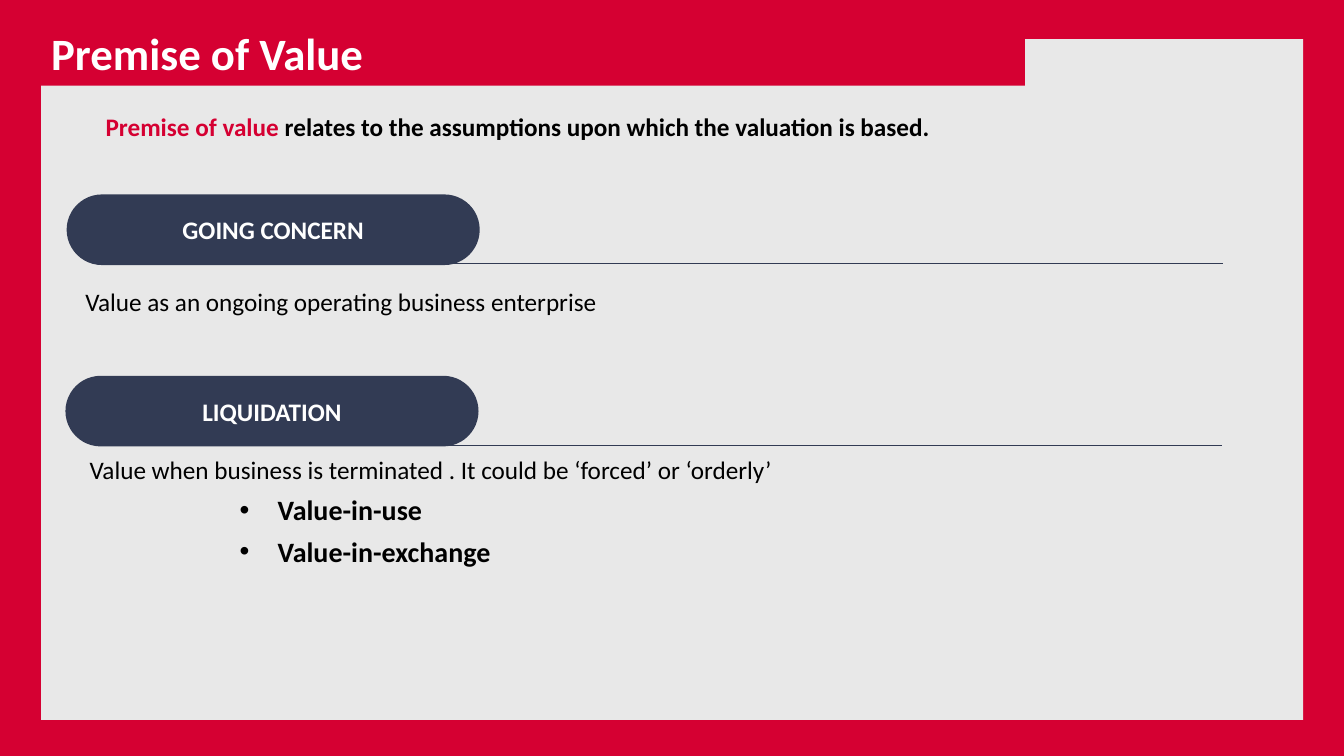
from pptx import Presentation
from pptx.dml.color import RGBColor as RGB
from pptx.enum.shapes import MSO_CONNECTOR as LINK, MSO_SHAPE as KIND
from pptx.enum.text import MSO_ANCHOR as ANCHOR, PP_ALIGN as ALIGN
from pptx.oxml.ns import qn
from pptx.util import Cm, Pt
from lxml.etree import SubElement as Sub

HUES = {"red": "D50032", "gray": "E8E8E8", "navy": "323B54", "white": "FFFFFF", "black": "000000"}

deck = Presentation()
deck.slide_width, deck.slide_height = Cm(33.87), Cm(19.05)
slide = deck.slides.add_slide(deck.slide_layouts[6])
shapes = slide.shapes


def block(kind, hue, *spot):
    shape = shapes.add_shape(kind, *map(Cm, spot))
    shape.shadow.inherit = False
    shape.fill.solid()
    shape.fill.fore_color.rgb = RGB.from_string(HUES[hue])
    shape.line.fill.background()
    return shape


def write(text, para, size=18, hue="black", bold=False, align=ALIGN.JUSTIFY,
          space=None, after=0, left=0, hang=0, dot=False):
    para.alignment = align
    para.line_spacing = space
    para.space_after = Pt(after)
    props = para._p.get_or_add_pPr()
    props.set("marL", str(Cm(left)))
    props.set("indent", str(Cm(hang)))
    if dot and props.find(qn("a:buChar")) is None:
        Sub(props, qn("a:buFont")).set("typeface", "Arial")
        Sub(props, qn("a:buChar")).set("char", "•")
    run = para.add_run()
    run.text = text
    font = run.font
    font.name, font.size, font.bold = "Calibri", Pt(size), bold
    font.color.rgb = RGB.from_string(HUES[hue])


block(KIND.RECTANGLE, "red", 0, 0, 33.87, 19.05)
block(KIND.RECTANGLE, "gray", 1.04, 0.99, 31.8, 17.15)

parts = [
    ("GOING CONCERN", 1.68, 4.9, 6.63, (1.9, 7.04, 28.93, 1.04),
     [("Value as an ongoing operating business enterprise", dict(left=0.64, hang=-0.64))]),
    ("LIQUIDATION", 1.65, 9.47, 11.23, (1.85, 11.28, 28.93, 3.15),
     [("Value when business is terminated . It could be ‘forced’ or ‘orderly’", dict(left=0.16))]
     + [(item, dict(size=20, bold=True, left=4.9, hang=-0.96, dot=True))
        for item in ("Value-in-use", "Value-in-exchange")]),
]

for name, left, top, rule, spot, lines in parts:
    line = shapes.add_connector(LINK.STRAIGHT, Cm(left + 5.13), Cm(rule), Cm(left + 29.15), Cm(rule))
    line.line.color.rgb = RGB.from_string(HUES["navy"])
    line.line.width = Pt(0.5)
    Sub(line._element.spPr, qn("a:effectLst"))

    pill = block(KIND.ROUNDED_RECTANGLE, "navy", left, top, 10.41, 1.78)
    pill.adjustments[0] = 0.5
    pill.text_frame.vertical_anchor = ANCHOR.MIDDLE
    write(name, pill.text_frame.paragraphs[0], hue="white", bold=True, align=ALIGN.CENTER)

    frame = shapes.add_textbox(*map(Cm, spot)).text_frame
    frame.word_wrap = True
    for count, (words, style) in enumerate(lines):
        para = frame.add_paragraph() if count else frame.paragraphs[0]
        write(words, para, space=1.07, after=4, **style)

title = block(KIND.RECTANGLE, "red", 1.04, 0.53, 24.79, 1.63)
title.text_frame.vertical_anchor = ANCHOR.TOP
write("Premise of Value", title.text_frame.paragraphs[0], size=32, hue="white", bold=True, align=ALIGN.LEFT)

frame = shapes.add_textbox(Cm(2.41), Cm(2.29), Cm(26.82), Cm(1.3)).text_frame
frame.word_wrap = True
for words, hue in (("Premise of value ", "red"),
                   ("relates to the assumptions upon which the valuation is based.", "black")):
    write(words, frame.paragraphs[0], hue=hue, bold=True, space=1.5)

deck.save("out.pptx")
